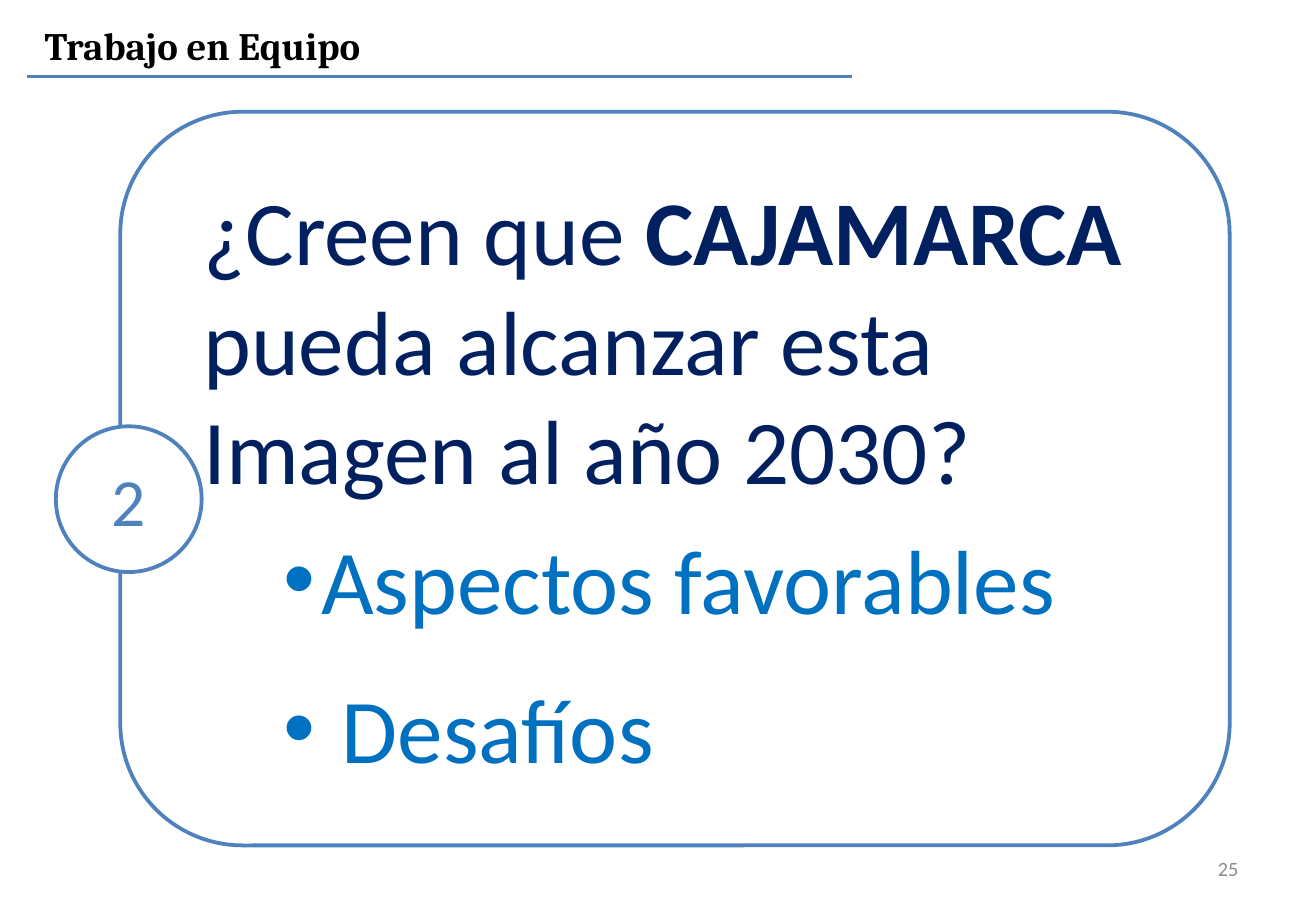
from dataclasses import dataclass

from lxml.etree import SubElement
from pptx import Presentation
from pptx.dml.color import RGBColor
from pptx.enum.shapes import MSO_CONNECTOR as CONN, MSO_SHAPE as SHAPE
from pptx.enum.text import MSO_ANCHOR as ANCHOR, PP_ALIGN as ALIGN
from pptx.oxml.ns import qn
from pptx.util import Inches, Pt


@dataclass(frozen=True)
class Theme:
    white: str = "FFFFFF"
    black: str = "000000"
    gray: str = "8C8C8C"
    accent: str = "4F81BD"
    navy: str = "002060"
    blue: str = "0070C0"
    body_font: str = "Calibri"
    title_font: str = "Cambria"
    title_size: int = 23
    body_size: int = 54
    badge_size: int = 40
    number_size: int = 12
    line_width: float = 2.25


T = Theme()


def add_run(p, text, size, color, bold=False, font=T.body_font):
    r = p.add_run()
    r.text = text
    r.font.name = font
    r.font.size = Pt(size)
    r.font.bold = bold
    r.font.color.rgb = RGBColor.from_string(color)


def set_indent(p, left, first=0, bullet=None):
    pPr = p._p.get_or_add_pPr()
    pPr.set("marL", str(Inches(left)))
    pPr.set("indent", str(Inches(first)))
    if bullet:
        SubElement(pPr, qn("a:buFont"), typeface="Arial")
        SubElement(pPr, qn("a:buChar"), char=bullet)


def add_text_box(slide, x, y, w, h, anchor=ANCHOR.TOP):
    tf = slide.shapes.add_textbox(Inches(x), Inches(y), Inches(w), Inches(h)).text_frame
    tf.word_wrap = True
    tf.vertical_anchor = anchor
    return tf.paragraphs[0]


def add_outlined(slide, kind, x, y, w, h):
    sp = slide.shapes.add_shape(kind, Inches(x), Inches(y), Inches(w), Inches(h))
    sp.shadow.inherit = False
    sp.fill.solid()
    sp.fill.fore_color.rgb = RGBColor.from_string(T.white)
    sp.line.color.rgb = RGBColor.from_string(T.accent)
    sp.line.width = Pt(T.line_width)
    tf = sp.text_frame
    tf.word_wrap = True
    tf.vertical_anchor = ANCHOR.MIDDLE
    return tf


# Title with the rule below it
def add_header(slide, x, y, w, h, title, rule_width):
    p = add_text_box(slide, x, y, w, h)
    add_run(p, title, T.title_size, T.black, bold=True, font=T.title_font)
    left, rule_y = Inches(x - 0.05), Inches(y + h + 0.01)
    rule = slide.shapes.add_connector(
        CONN.STRAIGHT, left, rule_y, left + Inches(rule_width), rule_y)
    rule.line.color.rgb = RGBColor.from_string(T.accent)
    rule.line.width = Pt(T.line_width)
    SubElement(rule._element.spPr, qn("a:effectLst"))


# Rounded panel: a question followed by bulleted topics
def add_question_panel(slide, x, y, w, h, question, topics):
    tf = add_outlined(slide, SHAPE.ROUNDED_RECTANGLE, x, y, w, h)
    p = tf.paragraphs[0]
    p.alignment = ALIGN.LEFT
    set_indent(p, 0.29)
    for text, bold in question:
        add_run(p, text, T.body_size, T.navy, bold)
    for topic in topics:
        p = tf.add_paragraph()
        p.alignment = ALIGN.LEFT
        p.space_before = p.space_after = Pt(12)
        set_indent(p, 1.26, -0.31, "•")
        add_run(p, topic, T.body_size, T.blue)


# Round number badge on the panel's left edge
def add_badge(slide, x, y, size, label):
    p = add_outlined(slide, SHAPE.OVAL, x, y, size, size).paragraphs[0]
    p.alignment = ALIGN.CENTER
    add_run(p, label, T.badge_size, T.accent)


# Slide number
def add_slide_number(slide, x, y, w, h, number):
    p = add_text_box(slide, x, y, w, h, ANCHOR.MIDDLE)
    p.alignment = ALIGN.RIGHT
    add_run(p, number, T.number_size, T.gray)


def main():
    prs = Presentation()
    prs.slide_width, prs.slide_height = Inches(10.83), Inches(7.5)
    slide = prs.slides.add_slide(prs.slide_layouts[6])
    add_slide_number(slide, 7.76, 6.95, 2.53, 0.4, "25")
    add_header(slide, 0.27, 0.13, 10.66, 0.49, "Trabajo en Equipo", rule_width=6.79)
    add_question_panel(
        slide, 0.99, 0.92, 9.13, 6.04,
        question=[("¿Creen que ", False), ("CAJAMARCA ", True),
                  ("pueda alcanzar esta Imagen al año 2030?", False)],
        topics=["Aspectos favorables", " Desafíos"])
    add_badge(slide, 0.46, 3.51, 1.2, "2")
    prs.save("out.pptx")


if __name__ == "__main__":
    main()
